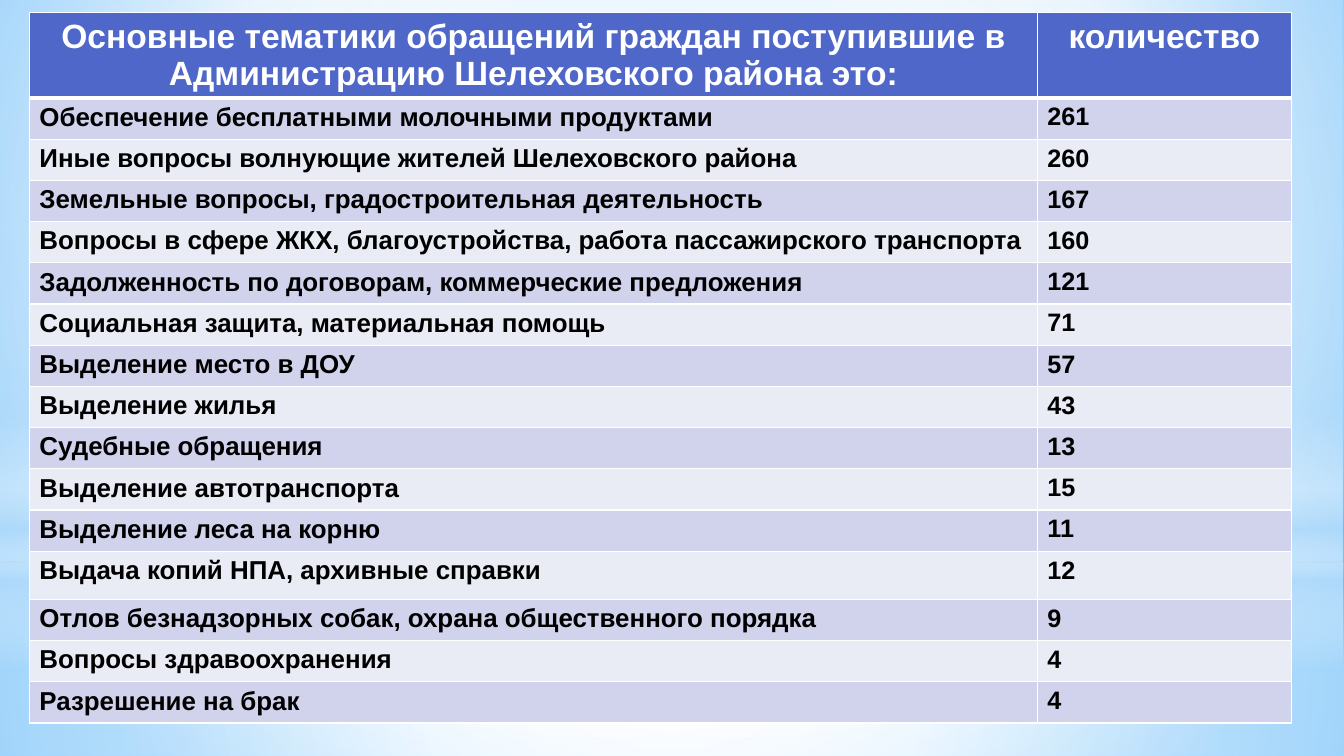
from lxml.etree import SubElement
from pptx import Presentation
from pptx.dml.color import RGBColor
from pptx.enum.shapes import MSO_SHAPE
from pptx.enum.text import PP_ALIGN
from pptx.oxml import parse_xml
from pptx.oxml.ns import nsdecls, qn
from pptx.util import Pt

WIDTH, HEIGHT = 960, 540
WHITE, PALE_BLUE = "FFFFFF", "B4DCFA"
HEADER = ("Основные тематики обращений граждан поступившие в Администрацию Шелеховского района это:",
          "количество")
TOPICS = [
    ("Обеспечение бесплатными молочными продуктами", 261),
    ("Иные вопросы волнующие жителей Шелеховского района", 260),
    ("Земельные вопросы, градостроительная деятельность", 167),
    ("Вопросы в сфере ЖКХ, благоустройства, работа пассажирского транспорта", 160),
    ("Задолженность по договорам, коммерческие предложения", 121),
    ("Социальная защита, материальная помощь", 71),
    ("Выделение место в ДОУ", 57),
    ("Выделение жилья", 43),
    ("Судебные обращения", 13),
    ("Выделение автотранспорта", 15),
    ("Выделение леса на корню", 11),
    ("Выдача копий НПА, архивные справки", 12),
    ("Отлов безнадзорных собак, охрана общественного порядка", 9),
    ("Вопросы здравоохранения", 4),
    ("Разрешение на брак", 4),
]
TALL_ROW = 12


def color(value):
    return RGBColor.from_string(value)


def set_gradient(element, stops, center=None):
    """Replace the solid fill by a circular gradient, or a vertical one without a center."""
    gradient = parse_xml(f'<a:gradFill {nsdecls("a")} rotWithShape="1"/>')
    stop_list = SubElement(gradient, qn("a:gsLst"))
    for position, value, opacity in stops:
        stop = SubElement(stop_list, qn("a:gs"), pos=str(position * 1000))
        stop_color = SubElement(stop, qn("a:srgbClr"), val=value)
        if opacity < 100:
            SubElement(stop_color, qn("a:alpha"), val=str(opacity * 1000))
    if center:
        circle = SubElement(gradient, qn("a:path"), path="circle")
        sides = {side: str(share * 1000) for side, share in zip("ltrb", center)}
        SubElement(circle, qn("a:fillToRect"), **sides)
    else:
        SubElement(gradient, qn("a:lin"), ang="5400000", scaled="0")
    solid = element.find(".//" + qn("a:solidFill"))
    solid.getparent().replace(solid, gradient)


class SlideBuilder:
    font = {"name": "Arial", "bold": True}
    border = WHITE

    def __init__(self, slide):
        self.slide = slide

    def background(self, stops, center):
        self.slide.background.fill.solid()
        set_gradient(self.slide.element, stops, center)

    def glow(self, kind, top, height, stops, center=None):
        shape = self.slide.shapes.add_shape(kind, 0, Pt(top), Pt(WIDTH), Pt(height))
        shape.shadow.inherit = False
        shape.line.fill.background()
        shape.fill.solid()
        set_gradient(shape.element, stops, center)

    def table(self, left, top, widths, heights, rows):
        frame = self.slide.shapes.add_table(
            len(rows), len(widths), Pt(left), Pt(top), Pt(sum(widths)), Pt(sum(heights)))
        for column, width in zip(frame.table.columns, widths):
            column.width = Pt(width)
        for row, height in zip(frame.table.rows, heights):
            row.height = Pt(height)
        for row_index, values in enumerate(rows):
            for column_index, value in enumerate(values):
                self.cell(frame.table.cell(row_index, column_index), value, row_index, column_index)

    def cell(self, cell, value, row, column):
        if row == 0:
            fill, align, format_values = "4E67C8", PP_ALIGN.CENTER, {"size": Pt(24)}
        else:
            fill = "D0D3EB" if row % 2 else "E9EBF5"
            align, format_values = PP_ALIGN.LEFT, {"size": Pt(18 if column else 18.5)}
        cell.fill.solid()
        cell.fill.fore_color.rgb = color(fill)
        paragraph = cell.text_frame.paragraphs[0]
        paragraph.alignment = align
        run = paragraph.add_run()
        run.text = str(value)
        for name, setting in (self.font | format_values).items():
            setattr(run.font, name, setting)
        run.font.color.rgb = color("000000" if row else WHITE)
        self.cell_borders(cell, {"L": 1, "R": 1, "T": 3 if row == 1 else 1, "B": 1 if row else 3})

    def cell_borders(self, cell, widths):
        properties = cell._tc.get_or_add_tcPr()
        for index, (side, width) in enumerate(widths.items()):
            properties.insert(index, parse_xml(
                f'<a:ln{side} {nsdecls("a")} w="{Pt(width)}"><a:solidFill>'
                f'<a:srgbClr val="{self.border}"/></a:solidFill></a:ln{side}>'))


def main():
    presentation = Presentation()
    presentation.slide_width, presentation.slide_height = Pt(WIDTH), Pt(HEIGHT)
    builder = SlideBuilder(presentation.slides.add_slide(presentation.slide_layouts[6]))
    middle = (50, 50, 50, 50)
    builder.background([(0, "9ED5FF", 100), (60, WHITE, 100), (100, "5BB9FF", 100)], (20, 10, 20, 60))
    builder.glow(MSO_SHAPE.RECTANGLE, 402, 138,
                 [(0, WHITE, 91), (37, WHITE, 76), (100, PALE_BLUE, 79)], middle)
    builder.glow(MSO_SHAPE.RECTANGLE, 0, 402,
                 [(0, WHITE, 89), (48, WHITE, 62), (100, PALE_BLUE, 79)], middle)
    builder.glow(MSO_SHAPE.RECTANGLE, 297, 180,
                 [(0, WHITE, 0), (29, WHITE, 30), (45, PALE_BLUE, 40),
                  (55, WHITE, 26), (65, PALE_BLUE, 60), (100, WHITE, 0)])
    builder.glow(MSO_SHAPE.OVAL, 126, 402, [(0, WHITE, 100), (56, WHITE, 0)], middle)
    heights = [61] + [34.5 if row == TALL_ROW else 29.45 for row in range(1, len(TOPICS) + 1)]
    builder.table(21, 9, [720, 181.5], heights, [HEADER] + TOPICS)
    presentation.save("out.pptx")


if __name__ == "__main__":
    main()
